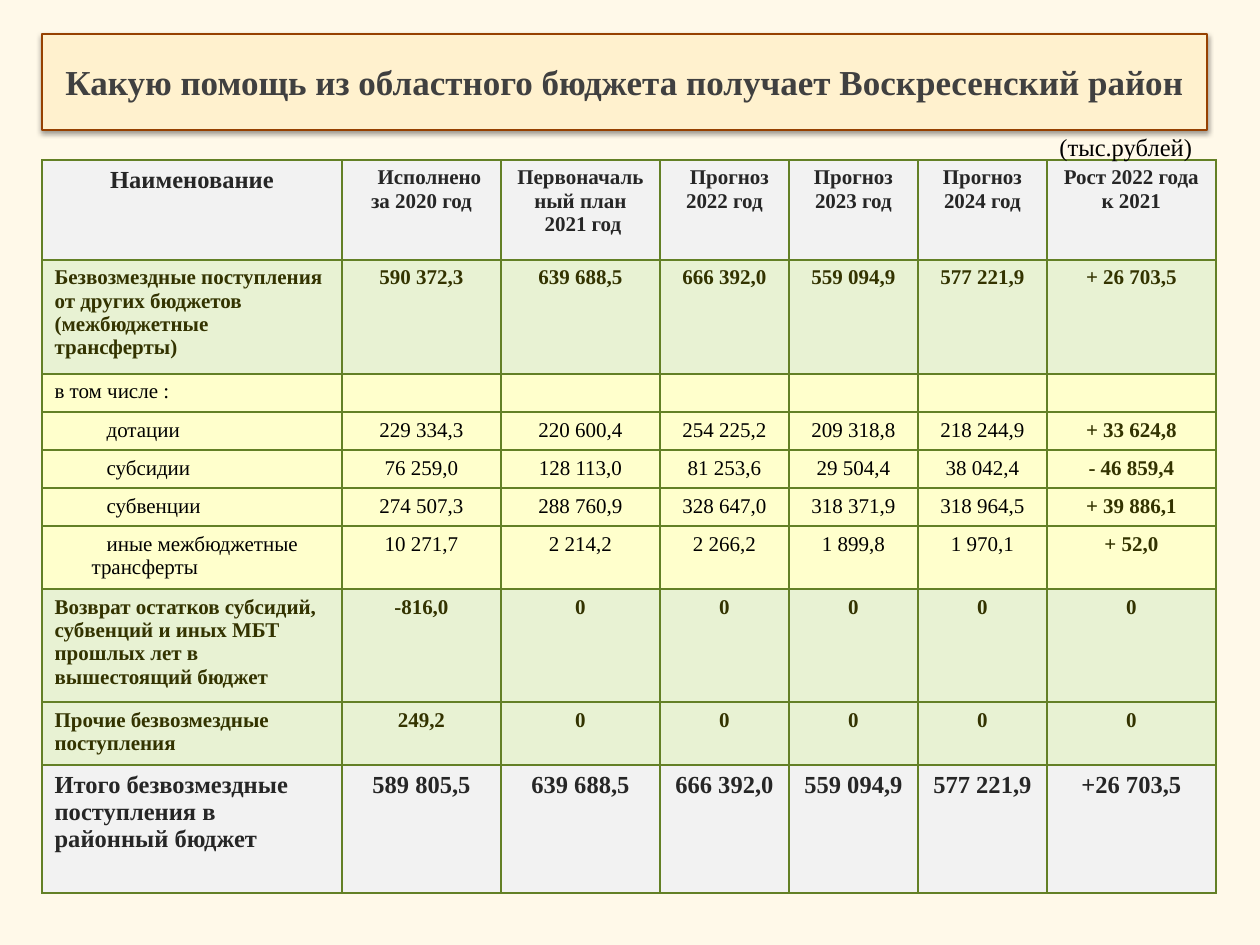
from lxml.etree import SubElement
from pptx import Presentation
from pptx.dml.color import RGBColor
from pptx.enum.text import MSO_ANCHOR, MSO_AUTO_SIZE, PP_ALIGN
from pptx.oxml import parse_xml
from pptx.oxml.ns import nsdecls, qn
from pptx.util import Emu, Pt

FONT = "Times New Roman"
COLORS = {
    "background": "FFF9E9", "banner": "FFF1CE", "banner_line": "964101", "title": "404040",
    "black": "000000", "dark": "262626", "olive": "333300", "border": "638026",
    "gray": "F2F2F2", "green": "E8F2D3", "yellow": "FFFFCC",
}
COLUMN_WIDTHS = [300, 159, 159, 129, 129, 129, 169]
# kind of row, height, cell texts
ROWS = [
    ("header", 100, ["Наименование", "Исполнено за 2020 год", "Первоначальный план\n2021 год",
                     "Прогноз 2022 год", "Прогноз 2023 год", "Прогноз 2024 год",
                     "Рост 2022 года к 2021"]),
    ("group", 114, ["Безвозмездные поступления от других бюджетов (межбюджетные трансферты)",
                    "590 372,3", "639 688,5", "666 392,0", "559 094,9", "577 221,9",
                    "+ 26 703,5"]),
    ("detail", 38, ["в том числе :"] + [""] * 6),
    ("item", 38, ["дотации", "229 334,3", "220 600,4", "254 225,2", "209 318,8", "218 244,9",
                  "+ 33 624,8"]),
    ("item", 38, ["субсидии", "76 259,0", "128 113,0", "81 253,6", "29 504,4", "38 042,4",
                  "- 46 859,4"]),
    ("item", 38, ["субвенции", "274 507,3", "288 760,9", "328 647,0", "318 371,9", "318 964,5",
                  "+ 39 886,1"]),
    ("item", 63, ["иные межбюджетные трансферты", "10 271,7", "2 214,2", "2 266,2", "1 899,8",
                  "1 970,1", "+ 52,0"]),
    ("group", 113, ["Возврат остатков субсидий, субвенций и иных МБТ прошлых лет в вышестоящий бюджет",
                    "-816,0"] + ["0"] * 5),
    ("group", 63, ["Прочие безвозмездные поступления", "249,2"] + ["0"] * 5),
    ("total", 128, ["Итого безвозмездные поступления в районный бюджет", "589 805,5",
                    "639 688,5", "666 392,0", "559 094,9", "577 221,9", "+26 703,5"]),
]
# kind of row: fill, text colour, size, bold
ROW_STYLES = {
    "header": ("gray", "dark", 12, True),
    "group": ("green", "olive", 12, True),
    "detail": ("yellow", "black", 12, False),
    "item": ("yellow", "black", 12, False),
    "total": ("gray", "dark", 14, True),
}
# (column, paragraph): first-line indent in the header
HEADER_INDENTS = {(1, 0): 16, (2, 1): 5, (3, 0): 10}


def px(length):
    return Emu(round(length * 914400 / 126))


def color(name):
    return RGBColor.from_string(COLORS[name])


def fill_with(target, name):
    target.fill.solid()
    target.fill.fore_color.rgb = color(name)


def format_runs(paragraph, size, name, bold=False):
    for run in paragraph.runs:
        run.font.name = FONT
        run.font.size = Pt(size)
        run.font.bold = bold
        run.font.color.rgb = color(name)


def indent(paragraph, left, first_line):
    properties = paragraph._p.get_or_add_pPr()
    properties.set("marL", str(px(left)))
    properties.set("indent", str(px(first_line)))


def add_borders(cell):
    properties = cell._tc.get_or_add_tcPr()
    for position, side in enumerate(("lnL", "lnR", "lnT", "lnB")):
        properties.insert(position, parse_xml(
            f'<a:{side} {nsdecls("a")} w="{Pt(1)}"><a:solidFill>'
            f'<a:srgbClr val="{COLORS["border"]}"/></a:solidFill></a:{side}>'))


def place_title(slide, left, top, width, height):
    """Turn the title placeholder into a rounded banner with a soft shadow."""
    title = slide.shapes.title
    title.left, title.top, title.width, title.height = map(px, (left, top, width, height))
    properties = title._element.spPr
    properties.append(parse_xml(
        f'<a:prstGeom {nsdecls("a")} prst="roundRect"><a:avLst/></a:prstGeom>'))
    fill_with(title, "banner")
    title.line.color.rgb = color("banner_line")
    title.line.width = Pt(0.75)
    properties.append(parse_xml(
        f'<a:effectLst {nsdecls("a")}><a:outerShdw blurRad="{Pt(3.1)}" dist="{Pt(1.6)}" '
        'dir="5400000" rotWithShape="0"><a:srgbClr val="000000"><a:alpha val="38000"/>'
        '</a:srgbClr></a:outerShdw></a:effectLst>'))
    frame = title.text_frame
    frame.text = "Какую помощь из областного бюджета получает Воскресенский район"
    frame.word_wrap = True
    frame.auto_size = MSO_AUTO_SIZE.NONE
    frame.vertical_anchor = MSO_ANCHOR.MIDDLE
    frame.paragraphs[0].alignment = PP_ALIGN.CENTER
    format_runs(frame.paragraphs[0], 20, "title", True)


def fill_cell(cell, kind, column, text):
    fill, text_color, size, bold = ROW_STYLES[kind]
    if kind == "header" and column == 0:
        size = 14
    if kind == "item" and column == len(COLUMN_WIDTHS) - 1:
        text_color, bold = "olive", True
    fill_with(cell, fill)
    add_borders(cell)
    cell.text_frame.text = text
    for number, paragraph in enumerate(cell.text_frame.paragraphs):
        if column or kind == "header":
            paragraph.alignment = PP_ALIGN.CENTER
        if kind == "item" and column == 0:
            indent(paragraph, 37, 15)
        if kind == "header" and (column, number) in HEADER_INDENTS:
            indent(paragraph, 0, HEADER_INDENTS[column, number])
        format_runs(paragraph, size, text_color, bold)
        if not text:  # keeps an empty cell from stretching its row
            SubElement(paragraph._p, qn("a:endParaRPr"), sz=str(size * 100))


def add_budget_table(slide, left, top):
    heights = [height for _, height, _ in ROWS]
    table = slide.shapes.add_table(
        len(ROWS), len(COLUMN_WIDTHS), px(left), px(top),
        px(sum(COLUMN_WIDTHS)), px(sum(heights))).table
    table.first_row = table.horz_banding = False
    for column, width in zip(table.columns, COLUMN_WIDTHS):
        column.width = px(width)
    for row, (kind, height, texts) in zip(table.rows, ROWS):
        row.height = px(height)
        for column, (cell, text) in enumerate(zip(row.cells, texts)):
            fill_cell(cell, kind, column, text)


def add_unit_label(slide, left, top, width, height):
    frame = slide.shapes.add_textbox(*map(px, (left, top, width, height))).text_frame
    frame.word_wrap = True
    frame.text = "(тыс.рублей)"
    format_runs(frame.paragraphs[0], 14, "black")


def main():
    presentation = Presentation()
    presentation.slide_width, presentation.slide_height = px(1260), px(945)
    slide = presentation.slides.add_slide(presentation.slide_layouts[5])
    fill_with(slide.background, "background")
    place_title(slide, 42, 34, 1165, 96)
    add_budget_table(slide, 42, 160)
    add_unit_label(slide, 1047, 126, 160, 43)
    presentation.save("out.pptx")


if __name__ == "__main__":
    main()
